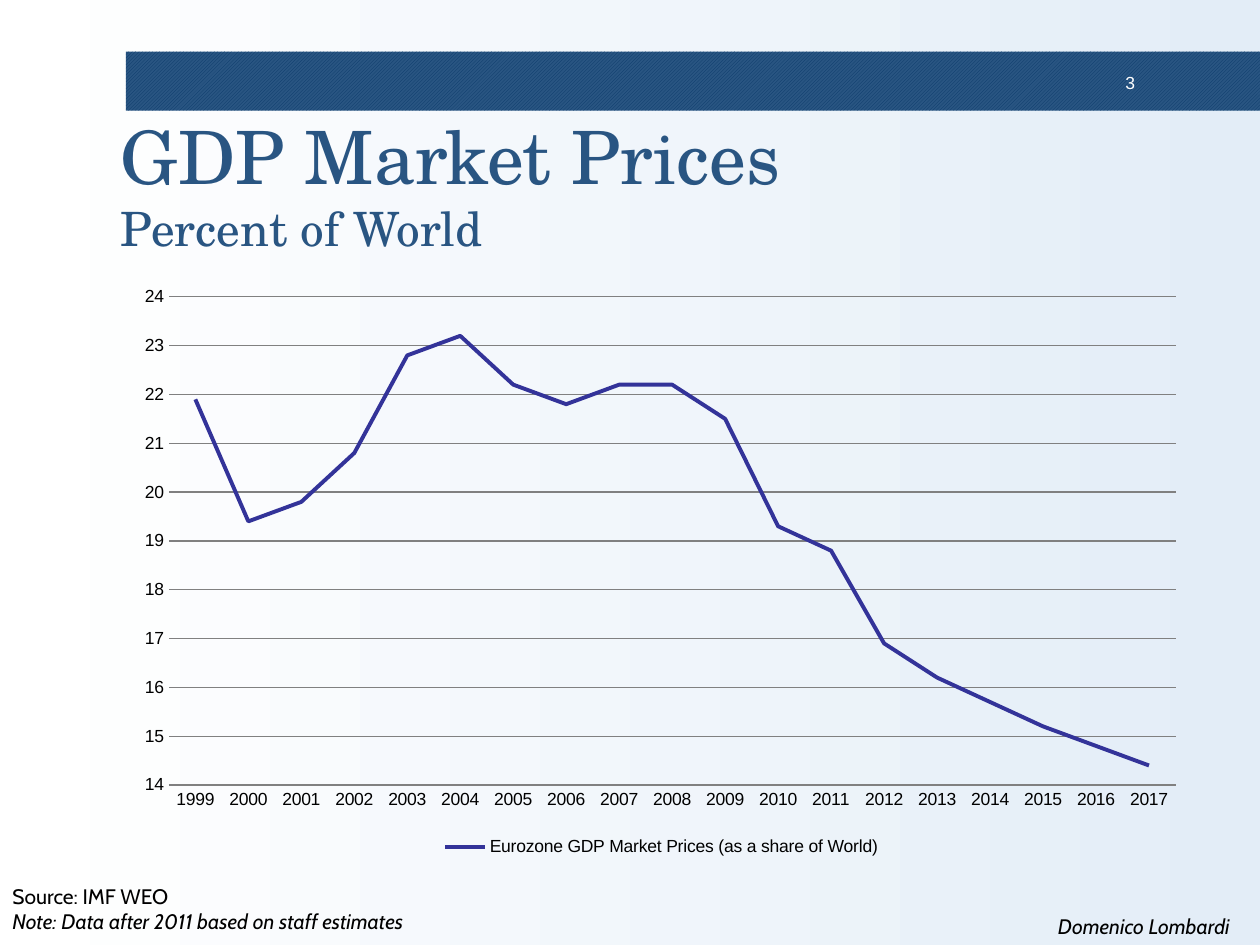
from dataclasses import dataclass

from lxml.etree import SubElement
from pptx import Presentation
from pptx.chart.data import CategoryChartData
from pptx.dml.color import RGBColor
from pptx.enum.chart import XL_CHART_TYPE, XL_LEGEND_POSITION, XL_MARKER_STYLE, XL_TICK_MARK
from pptx.enum.dml import MSO_PATTERN
from pptx.enum.shapes import MSO_SHAPE
from pptx.enum.text import MSO_ANCHOR, PP_ALIGN
from pptx.oxml.ns import qn
from pptx.util import Cm, Pt


@dataclass(frozen=True)
class Theme:
    """Colours, fonts and type sizes of the slide."""
    blue: RGBColor = RGBColor(0x29, 0x55, 0x82)
    navy: RGBColor = RGBColor(0x08, 0x38, 0x68)
    pale: RGBColor = RGBColor(0xE3, 0xED, 0xF7)
    curve: RGBColor = RGBColor(0x33, 0x33, 0x99)
    grid: RGBColor = RGBColor(0x80, 0x80, 0x80)
    white: RGBColor = RGBColor(0xFF, 0xFF, 0xFF)
    black: RGBColor = RGBColor(0, 0, 0)
    heading: str = "TeX Gyre Schola"
    body: str = "Cabin"
    data: str = "Arial"
    title_size: Pt = Pt(42)
    subtitle_size: Pt = Pt(27)
    note_size: Pt = Pt(12)
    data_size: Pt = Pt(10)


THEME = Theme()
YEARS = range(1999, 2018)
GDP_SHARES = (21.9, 19.4, 19.8, 20.8, 22.8, 23.2, 22.2, 21.8, 22.2, 22.2,
              21.5, 19.3, 18.8, 16.9, 16.2, 15.7, 15.2, 14.8, 14.4)
PLOT_LAYOUT = {"layoutTarget": "inner", "xMode": "edge", "yMode": "edge",
               "x": 0.04, "y": 0.04, "w": 0.94, "h": 0.83}


def apply(target, formats):
    """Set each attribute of the target from a dict of format values."""
    for name, value in formats.items():
        setattr(target, name, value)


def style_font(font, color, **formats):
    """Give a font its colour and other format values."""
    apply(font, formats)
    font.color.rgb = color


def add_text_frame(slide, box, inset=(0.25, 0.13), **formats):
    """Add a text box with equal side and equal top insets and return its frame."""
    frame = slide.shapes.add_textbox(*map(Cm, box)).text_frame
    side, edge = map(Cm, inset)
    apply(frame, {"margin_left": side, "margin_right": side,
                  "margin_top": edge, "margin_bottom": edge, **formats})
    return frame


def add_banner(slide, box, number):
    """Place the hatched band with the slide number near its right end."""
    left, top, width, height = box
    band = slide.shapes.add_shape(MSO_SHAPE.RECTANGLE, *map(Cm, box))
    band.shadow.inherit = False
    band.line.fill.background()
    band.fill.patterned()
    band.fill.pattern = MSO_PATTERN.LIGHT_UPWARD_DIAGONAL
    band.fill.fore_color.rgb = THEME.navy
    band.fill.back_color.rgb = THEME.blue
    number_box = (left + width - 3.38, top + 0.31, 1.04, 0.58)
    frame = add_text_frame(slide, number_box, (0.18, 0.1), word_wrap=True)
    paragraph = frame.paragraphs[0]
    paragraph.alignment = PP_ALIGN.RIGHT
    run = paragraph.add_run()
    run.text = number
    style_font(run.font, THEME.white, name=THEME.data, size=THEME.data_size)


def add_title(slide, box, title, subtitle):
    """Place the title with the smaller subtitle on the next line."""
    frame = add_text_frame(slide, box, (0.1, 0.1), word_wrap=True,
                           vertical_anchor=MSO_ANCHOR.MIDDLE)
    paragraph = frame.paragraphs[0]
    for text, size in ((title, THEME.title_size), (subtitle, THEME.subtitle_size)):
        if paragraph.runs:
            paragraph.add_line_break()
        run = paragraph.add_run()
        run.text = text
        style_font(run.font, THEME.blue, name=THEME.heading, size=size)


def add_gdp_chart(slide, box):
    """Place the line chart of the Eurozone share of world GDP."""
    gdp_data = CategoryChartData(number_format="0.0")
    gdp_data.categories = [str(year) for year in YEARS]
    gdp_data.add_series("Eurozone GDP Market Prices (as a share of World)", GDP_SHARES)
    chart = slide.shapes.add_chart(XL_CHART_TYPE.LINE, *map(Cm, box), gdp_data).chart
    apply(chart, {"has_title": False, "has_legend": True})
    apply(chart.legend, {"position": XL_LEGEND_POSITION.BOTTOM, "include_in_layout": False})
    style_font(chart.font, THEME.black, name=THEME.data, size=THEME.data_size)

    no_ticks = {"major_tick_mark": XL_TICK_MARK.NONE, "minor_tick_mark": XL_TICK_MARK.NONE}
    shares, years = chart.value_axis, chart.category_axis
    apply(years, no_ticks)
    apply(shares, {**no_ticks, "minimum_scale": 14, "maximum_scale": 24,
                   "major_unit": 1, "has_major_gridlines": True})
    apply(shares.tick_labels, {"number_format": "0", "number_format_is_linked": False})
    shares.format.line.fill.background()
    for line in (shares.major_gridlines.format.line, years.format.line):
        line.color.rgb = THEME.grid
        line.width = Pt(0.75)

    plot = chart.plots[0]
    plot.vary_by_categories = False
    curve = plot.series[0]
    curve.smooth = False
    curve.marker.style = XL_MARKER_STYLE.NONE
    curve.format.line.color.rgb = THEME.curve
    curve.format.line.width = Pt(2.25)

    plot_area = chart.element.find(".//" + qn("c:plotArea"))
    layout = plot_area.find(qn("c:layout"))
    if layout is None:
        layout = SubElement(plot_area, qn("c:layout"))
        plot_area.insert(0, layout)
    manual = SubElement(layout, qn("c:manualLayout"))
    for name, value in PLOT_LAYOUT.items():
        SubElement(manual, qn(f"c:{name}")).set("val", str(value))


def add_note(slide, box, lines, alignment=PP_ALIGN.LEFT):
    """Place lines of small text, each given with its italic setting."""
    frame = add_text_frame(slide, box, word_wrap=False)
    for index, (text, italic) in enumerate(lines):
        paragraph = frame.add_paragraph() if index else frame.paragraphs[0]
        paragraph.alignment = alignment
        run = paragraph.add_run()
        run.text = text
        style_font(run.font, THEME.black, name=THEME.body,
                   size=THEME.note_size, italic=italic)


def fill_background(slide):
    """Fill the background from white at the left to pale blue at the right."""
    fill = slide.background.fill
    fill.gradient()
    fill.gradient_angle = 0
    for stop, color, position in zip(fill.gradient_stops, (THEME.white, THEME.pale), (0, 1)):
        stop.color.rgb = color
        stop.position = position


def main():
    """Build the slide and save it."""
    presentation = Presentation()
    apply(presentation, {"slide_width": Cm(25.4), "slide_height": Cm(19.05)})
    slide = presentation.slides.add_slide(presentation.slide_layouts[6])
    fill_background(slide)
    add_banner(slide, (2.54, 1.04, 22.86, 1.19), "3")
    add_note(slide, (0, 17.68, 9.3, 1.8),
             (("Source: IMF WEO", False),
              ("Note: Data after 2011 based on staff estimates", True)))
    add_gdp_chart(slide, (2.54, 5.51, 21.59, 11.86))
    add_title(slide, (2.34, 2.11, 22.86, 3.18), "GDP Market Prices ", "Percent of World")
    add_note(slide, (20.9, 18.29, 4.32, 0.76),
             (("Domenico Lombardi", True),), PP_ALIGN.CENTER)
    presentation.save("out.pptx")


if __name__ == "__main__":
    main()
